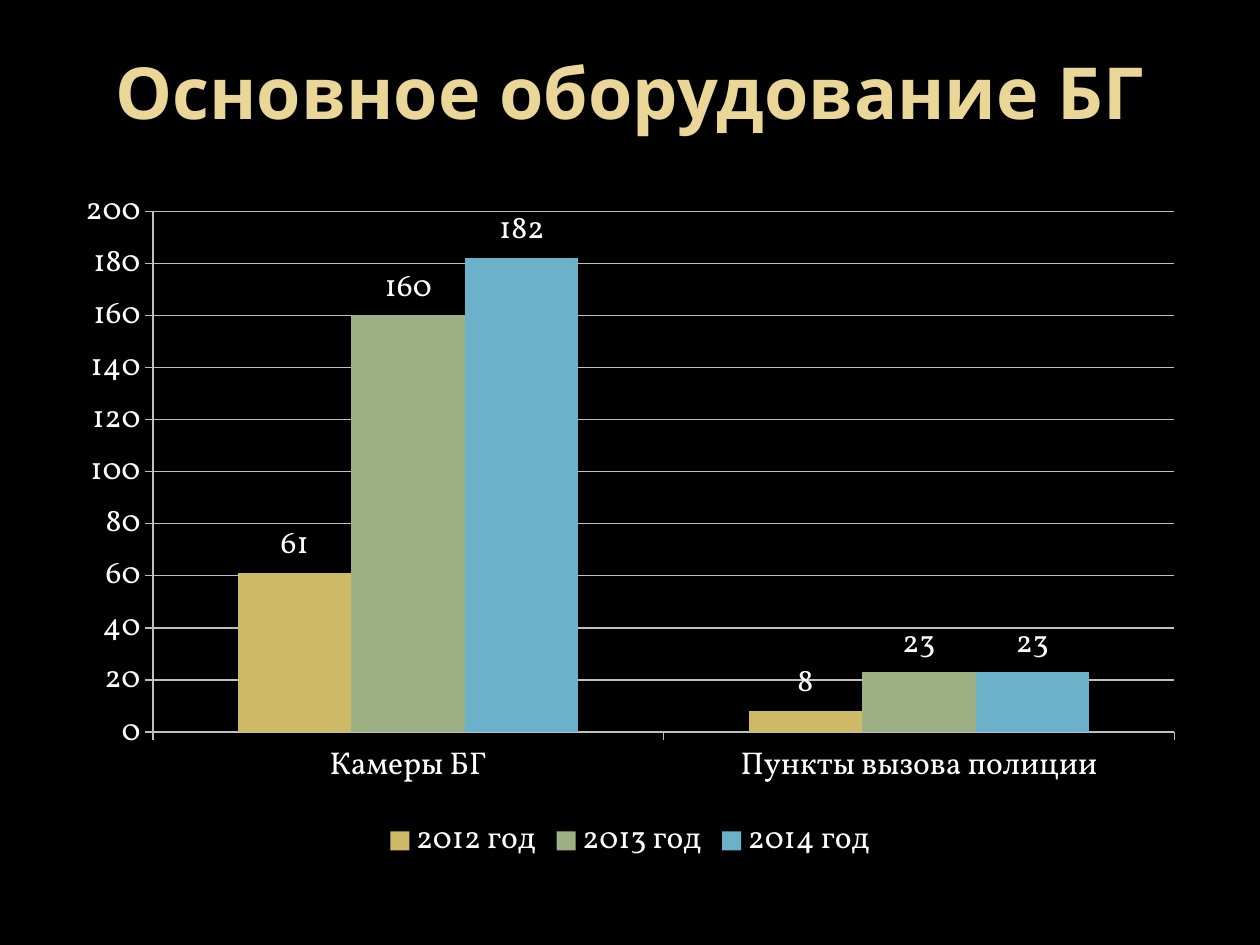
from pptx import Presentation
from pptx import util as u
from pptx.chart.data import CategoryChartData
from pptx.dml.color import RGBColor
from pptx.enum import chart as ch, text

WHITE, GRID, GOLD = "FFFFFF", "BFBFBF", "EAD696"
CATS = ["Камеры БГ", "Пункты вызова полиции"]
YEARS = [
    ("2012 год", (61, 8), "CEB966"),
    ("2013 год", (160, 23), "9CB084"),
    ("2014 год", (182, 23), "6BB1C9"),
]


def paint(fill, hue):
    fill.solid()
    fill.fore_color.rgb = RGBColor.from_string(hue)


def style(font, face, size, hue):
    font.name = face
    font.size = u.Pt(size)
    font.color.rgb = RGBColor.from_string(hue)


def rule(line):
    line.width = u.Pt(0.75)
    paint(line.fill, GRID)


def add_title(slide, box, words):
    head = slide.shapes.title
    head.left, head.top, head.width, head.height = box
    frame = head.text_frame
    frame.word_wrap = True
    frame.vertical_anchor = text.MSO_ANCHOR.MIDDLE
    para = frame.paragraphs[0]
    para.alignment = text.PP_ALIGN.CENTER
    run = para.add_run()
    run.text = words
    run.font.bold = True
    style(run.font, "Noto Sans", 41, GOLD)


def add_bars(slide, box):
    data = CategoryChartData()
    data.categories = CATS
    for name, vals, _ in YEARS:
        data.add_series(name, vals)
    kind = ch.XL_CHART_TYPE.COLUMN_CLUSTERED
    chart = slide.shapes.add_chart(kind, *box, data).chart
    style(chart.font, "Vollkorn", 18, WHITE)
    chart.has_title = False

    chart.has_legend = True
    chart.legend.position = ch.XL_LEGEND_POSITION.BOTTOM
    chart.legend.include_in_layout = False

    for axis in (chart.category_axis, chart.value_axis):
        axis.major_tick_mark = ch.XL_TICK_MARK.OUTSIDE
        axis.minor_tick_mark = ch.XL_TICK_MARK.NONE
        rule(axis.format.line)
    chart.value_axis.has_major_gridlines = True
    rule(chart.value_axis.major_gridlines.format.line)

    plot = chart.plots[0]
    plot.gap_width = 150
    plot.overlap = 0
    plot.vary_by_categories = False
    for bars, (_, _, hue) in zip(plot.series, YEARS):
        paint(bars.format.fill, hue)
        tags = bars.data_labels
        tags.show_value = True
        tags.position = ch.XL_LABEL_POSITION.OUTSIDE_END


def main():
    deck = Presentation()
    deck.slide_width, deck.slide_height = u.Cm(25.4), u.Cm(19.05)
    slide = deck.slides.add_slide(deck.slide_layouts[5])
    paint(slide.background.fill, "000000")
    left, wide = u.Cm(1.27), u.Cm(22.86)
    add_title(slide, (left, u.Cm(0.76), wide, u.Cm(2.16)),
              "Основное оборудование БГ")
    add_bars(slide, (left, u.Cm(3.53), wide, u.Cm(14)))
    deck.save("out.pptx")


if __name__ == "__main__":
    main()
